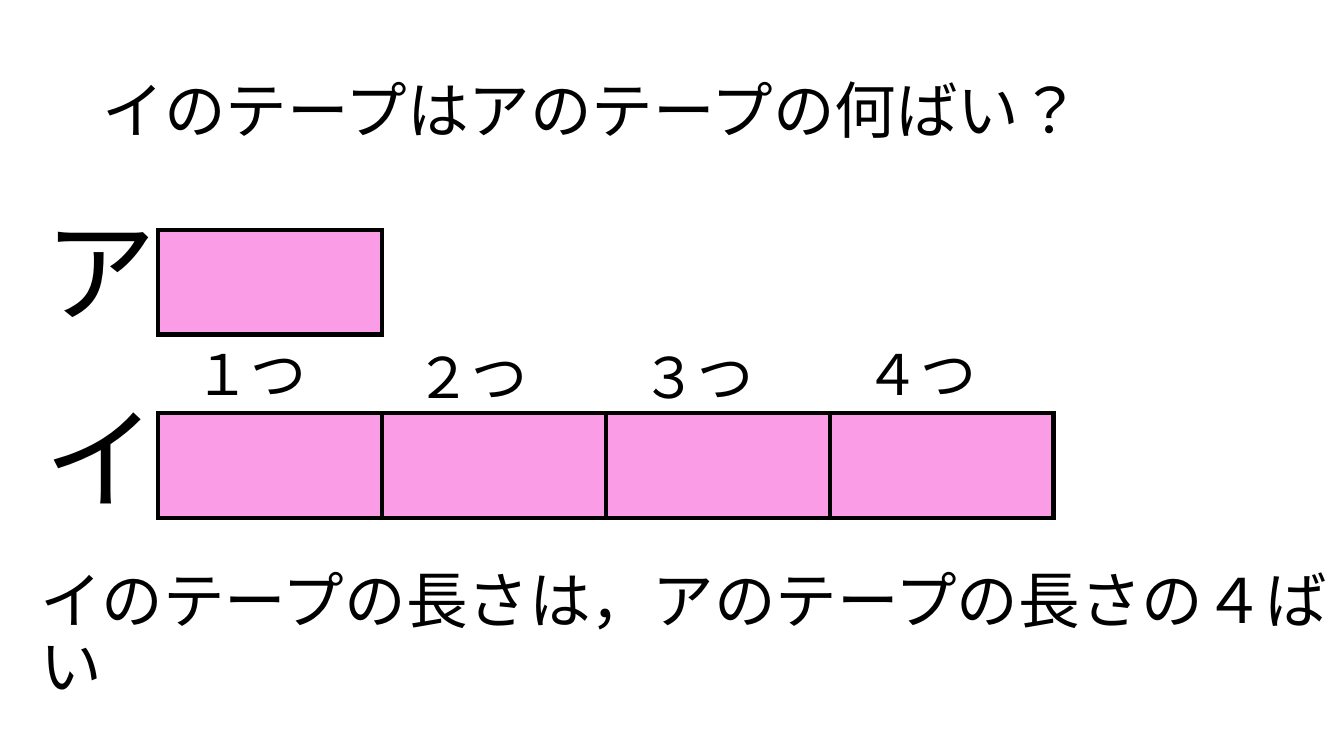
"""Build the slide that compares the lengths of tapes ア and イ."""
from lxml.etree import SubElement
from pptx import Presentation
from pptx.dml.color import RGBColor
from pptx.enum.lang import MSO_LANGUAGE_ID
from pptx.enum.shapes import MSO_SHAPE
from pptx.enum.text import MSO_ANCHOR
from pptx.oxml.ns import qn
from pptx.util import Inches, Pt

JAPANESE = "Noto Sans CJK JP"
TAPE_LEFT, TAPE_W, TAPE_H = 1.57, 2.22, 1.04
TAPE_A_TOP, TAPE_B_TOP = 2.28, 4.1


def color(value):
    return RGBColor.from_string(value)


def add_text(box, lines, size, font="Calibri", anchor=MSO_ANCHOR.TOP, **spacing):
    tf = s.shapes.add_textbox(*map(Inches, box)).text_frame
    tf.word_wrap = True
    tf.vertical_anchor = anchor
    for i, line in enumerate(lines):
        p = tf.add_paragraph() if i else tf.paragraphs[0]
        for name, value in spacing.items():
            if i or name != "space_before":
                setattr(p, name, value)
        r = p.add_run()
        r.text = line
        font_format = {"size": Pt(size), "name": font,
                       "language_id": MSO_LANGUAGE_ID.JAPANESE}
        for name, value in font_format.items():
            setattr(r.font, name, value)
        r.font.color.rgb = color("000000")
        SubElement(r.font._element, qn("a:ea"), typeface=JAPANESE)


prs = Presentation()
prs.slide_width, prs.slide_height = Inches(13.33), Inches(7.5)
s = prs.slides.add_slide(prs.slide_layouts[6])

add_text((0.92, 0.4, 11.5, 1.45), ["イのテープはアのテープの何ばい？"], 44,
         anchor=MSO_ANCHOR.MIDDLE, line_spacing=0.9)
add_text((0.34, 2.21, 1.42, 4.74), ["ア", "イ"], 80,
         line_spacing=0.8, space_before=Pt(57))

counts = [("１つ", 1.83, 3.32), ("２つ", 4.02, 3.35),
          ("３つ", 6.26, 3.35), ("４つ", 8.48, 3.32)]
for label, left, top in counts:
    add_text((left, top, 1.71, 0.77), [label], 40, JAPANESE)

tapes = [(0, TAPE_A_TOP)] + [(i, TAPE_B_TOP) for i in range(len(counts))]
for i, top in tapes:
    sp = s.shapes.add_shape(MSO_SHAPE.RECTANGLE, Inches(TAPE_LEFT + i * TAPE_W),
                            Inches(top), Inches(TAPE_W), Inches(TAPE_H))
    sp.shadow.inherit = False
    sp.fill.solid()
    sp.fill.fore_color.rgb = color("FA9CE6")
    sp.line.color.rgb = color("000000")
    sp.line.width = Pt(3)
    SubElement(sp._element.spPr.find(qn("a:ln")), qn("a:miter"), lim="800000")

add_text((0.3, 5.59, 13.27, 1.45), ["イのテープの長さは，アのテープの長さの４ばい"], 44,
         anchor=MSO_ANCHOR.MIDDLE, line_spacing=0.9)

prs.save("out.pptx")
